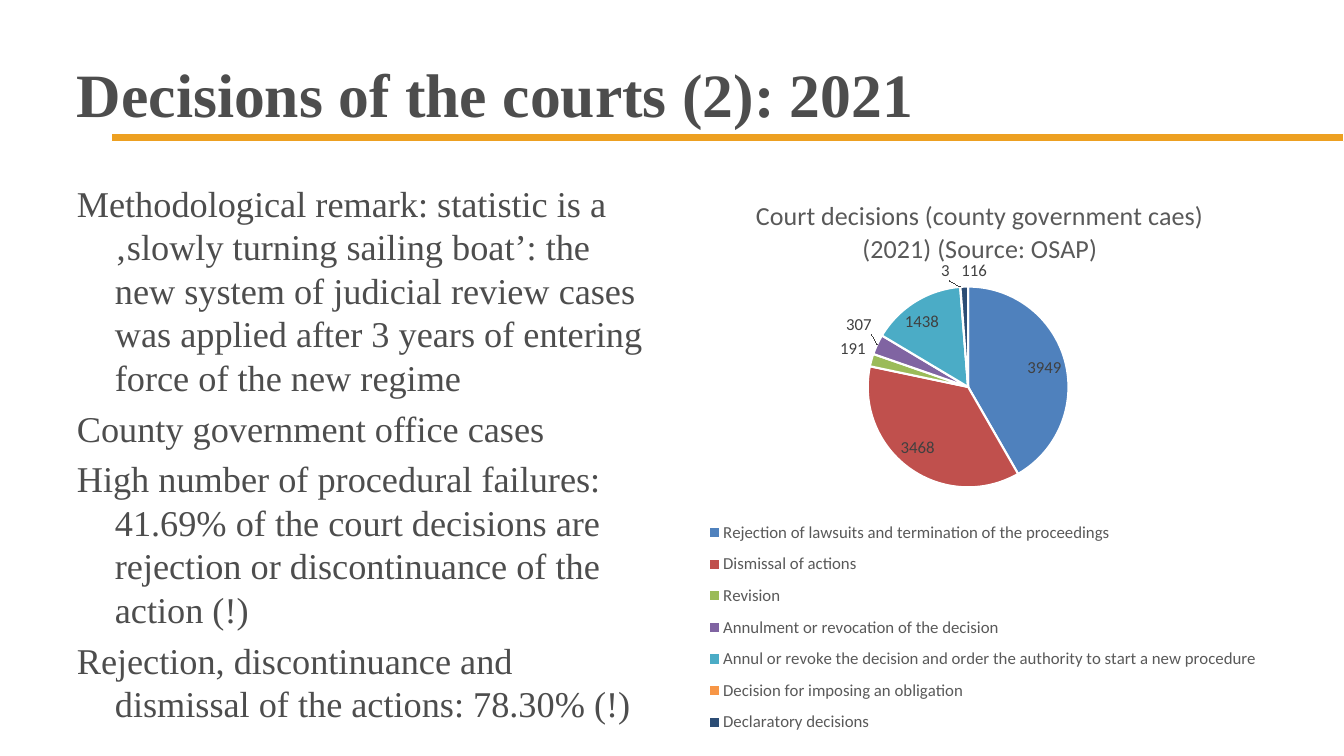
from dataclasses import dataclass

import lxml.etree
import pptx
import pptx.chart.data
import pptx.dml.color
import pptx.enum.chart
import pptx.enum.shapes
import pptx.enum.text
import pptx.oxml.ns
import pptx.util


@dataclass(frozen=True)
class Theme:
    serif: str = "Times New Roman"
    sans: str = "Calibri"
    ink: str = "4D4D4D"
    accent: str = "EDA021"
    paper: str = "FFFFFF"
    chart_ink: str = "595959"
    label_ink: str = "404040"
    slices: tuple = ("4F81BD", "C0504D", "9BBB59", "8064A2",
                     "4BACC6", "F79646", "2C4D75")
    title_size: float = 44
    body_size: float = 25.9
    body_line: float = 31.1
    body_gap: float = 5.2
    chart_title_size: float = 18.6
    chart_size: float = 12


def px(length):
    return pptx.util.Emu(round(length * 914400 / 100.8))


def rgb(value):
    return pptx.dml.color.RGBColor.from_string(value)


def style(font, face, size, color, bold=False):
    font.name, font.size, font.bold = face, pptx.util.Pt(size), bold
    font.color.rgb = rgb(color)


def place(part, index, fractions, inner=False):
    """Fix a chart part at x, y, w, h, given as fractions of the chart."""
    qn = pptx.oxml.ns.qn
    for old in part.findall(qn("c:layout")):
        part.remove(old)
    layout = lxml.etree.Element(qn("c:layout"))
    manual = lxml.etree.SubElement(layout, qn("c:manualLayout"))
    settings = [("layoutTarget", "inner")] if inner else []
    settings += [("xMode", "edge"), ("yMode", "edge")]
    settings += zip("xywh", map(str, fractions))
    for tag, value in settings:
        lxml.etree.SubElement(manual, qn(f"c:{tag}")).set("val", value)
    part.insert(index, layout)


class SlideBuilder:
    def __init__(self, slide, theme):
        self.slide, self.theme = slide, theme

    def bar(self, *box):
        shape = self.slide.shapes.add_shape(
            pptx.enum.shapes.MSO_SHAPE.RECTANGLE, *map(px, box))
        shape.shadow.inherit = False
        shape.fill.solid()
        shape.fill.fore_color.rgb = rgb(self.theme.accent)
        shape.line.color.rgb = rgb(self.theme.paper)
        shape.line.width = pptx.util.Pt(0.75)

    def frame(self, box):
        frame = self.slide.shapes.add_textbox(*map(px, box)).text_frame
        frame.word_wrap = True
        return frame

    def run(self, paragraph, text, size, bold=False):
        run = paragraph.add_run()
        run.text = text
        style(run.font, self.theme.serif, size, self.theme.ink, bold)

    def title(self, text, *box):
        frame = self.frame(box)
        frame.vertical_anchor = pptx.enum.text.MSO_ANCHOR.MIDDLE
        self.run(frame.paragraphs[0], text, self.theme.title_size, True)

    def body(self, remarks, *box):
        """Write paragraphs with a hanging indent."""
        frame = self.frame(box)
        for index, remark in enumerate(remarks):
            paragraph = frame.add_paragraph() if index else frame.paragraphs[0]
            properties = paragraph._p.get_or_add_pPr()
            properties.set("marL", str(px(38)))
            properties.set("indent", str(px(-38)))
            paragraph.line_spacing = pptx.util.Pt(self.theme.body_line)
            if index:
                paragraph.space_before = pptx.util.Pt(self.theme.body_gap)
            self.run(paragraph, remark, self.theme.body_size)

    def pie(self, title, counts, *box):
        theme = self.theme
        data = pptx.chart.data.CategoryChartData()
        data.categories = list(counts)
        data.add_series(title, list(counts.values()))
        chart = self.slide.shapes.add_chart(
            pptx.enum.chart.XL_CHART_TYPE.PIE, *map(px, box), data).chart
        style(chart.font, theme.sans, theme.chart_size, theme.chart_ink)

        chart.has_title = True
        heading = chart.chart_title.text_frame.paragraphs[0].add_run()
        heading.text = title
        style(heading.font, theme.sans, theme.chart_title_size, theme.chart_ink)
        chart.chart_title.include_in_layout = False

        chart.has_legend = True
        chart.legend.position = pptx.enum.chart.XL_LEGEND_POSITION.BOTTOM
        chart.legend.include_in_layout = False
        style(chart.legend.font, theme.sans, theme.chart_size, theme.chart_ink)

        plot = chart.plots[0]
        plot.vary_by_categories = True
        decisions = plot.series[0]
        for index, color in enumerate(theme.slices):
            piece = decisions.points[index].format
            piece.fill.solid()
            piece.fill.fore_color.rgb = rgb(color)
            piece.line.color.rgb = rgb(theme.paper)
            piece.line.width = pptx.util.Pt(1.5)
        labels = decisions.data_labels
        labels.show_value = True
        labels.position = pptx.enum.chart.XL_LABEL_POSITION.BEST_FIT
        style(labels.font, theme.sans, theme.chart_size, theme.label_ink)

        root = chart._chartSpace
        place(root.find(".//" + pptx.oxml.ns.qn("c:plotArea")), 0,
              (0.311, 0.184, 0.338, 0.375), inner=True)
        place(root.find(".//" + pptx.oxml.ns.qn("c:legend")), 1,
              (0.03, 0.59, 0.95, 0.41))


REMARKS = (
    "Methodological remark: statistic is a ‚slowly turning sailing boat’: "
    "the new system of judicial review cases was applied after 3 years of "
    "entering force of the new regime",
    "County government office cases",
    "High number of procedural failures: 41.69% of the court decisions are "
    "rejection or discontinuance of the action (!)",
    "Rejection, discontinuance and dismissal of the actions: 78.30% (!)",
)
DECISIONS = {
    "Rejection of lawsuits and termination of the proceedings": 3949,
    "Dismissal of actions": 3468,
    "Revision": 191,
    "Annulment or revocation of the decision": 307,
    "Annul or revoke the decision and order the authority "
    "to start a new procedure": 1438,
    "Decision for imposing an obligation": 3,
    "Declaratory decisions": 116,
}


def main():
    deck = pptx.Presentation()
    deck.slide_width, deck.slide_height = px(1344), px(756)
    builder = SlideBuilder(deck.slides.add_slide(deck.slide_layouts[6]), Theme())
    builder.bar(112, 134, 1232, 8)
    builder.title("Decisions of the courts (2): 2021", 67, 30, 1210, 126)
    builder.body(REMARKS, 67, 176, 594, 499)
    builder.pie("Court decisions (county government caes) (2021) (Source: OSAP)",
                DECISIONS, 683, 176, 594, 568)
    deck.save("out.pptx")


if __name__ == "__main__":
    main()
